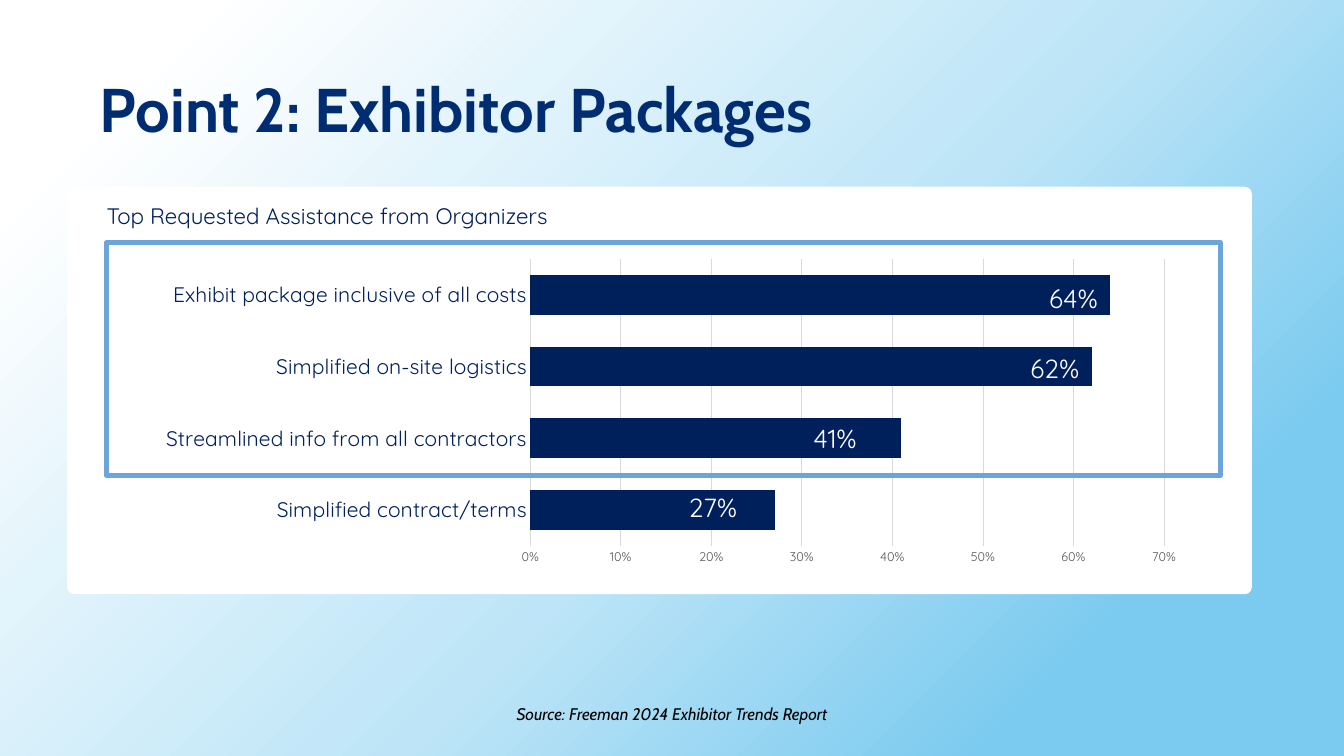
from pptx import Presentation
from pptx.chart.data import CategoryChartData
from pptx.dml.color import RGBColor
from pptx.enum.chart import XL_CHART_TYPE, XL_TICK_MARK
from pptx.enum.shapes import MSO_SHAPE
from pptx.enum.text import MSO_ANCHOR, MSO_AUTO_SIZE, PP_ALIGN
from pptx.oxml import parse_xml
from pptx.oxml.ns import nsdecls
from pptx.util import Inches, Pt

# Content
TITLE = "Point 2: Exhibitor Packages"
CHART_HEADING = "Top Requested Assistance from Organizers"
SOURCE = "Source: Freeman 2024 Exhibitor Trends Report"
REQUESTS = [  # category, share, left and top of its value label; bottom bar first
    ("Simplified contract/terms", 0.27, 9.11, 6.5),
    ("Streamlined info from all contractors", 0.41, 10.76, 5.59),
    ("Simplified on-site logistics", 0.62, 13.63, 4.66),
    ("Exhibit package inclusive of all costs", 0.64, 13.88, 3.74),
]
COLORS = {"title": "002D72", "navy": "00205C", "white": "FFFFFF", "black": "000000",
          "grid": "D9D9D9", "tick": "595959", "highlight": "6DA5DB"}
GRADIENT = [(17, "7BCAEF"), (45, "BDE5F7"), (90, "FFFFFF")]
CHART_BOX = (1.93, 3.34, 13.93, 4.21)
PLOT_BOX = (7.02, 3.43, 8.39, 3.79)


def color(name):
    return RGBColor.from_string(COLORS[name])


def set_font(font, name, size, color_name):
    font.name, font.size = name, Pt(size)
    font.color.rgb = color(color_name)


def add_text(slide, text, box, name, size, color_name, inset=0):
    shape = slide.shapes.add_textbox(*map(Inches, box))
    frame = shape.text_frame
    frame.word_wrap = True
    frame.auto_size = MSO_AUTO_SIZE.SHAPE_TO_FIT_TEXT
    if inset == 0:
        frame.margin_left = frame.margin_right = frame.margin_top = frame.margin_bottom = 0
    paragraph = frame.paragraphs[0]
    paragraph.text = text
    set_font(paragraph.font, name, size, color_name)
    return shape


def set_background(slide):
    stops = "".join(f'<a:gs pos="{position * 1000}"><a:srgbClr val="{value}"/></a:gs>'
                    for position, value in GRADIENT)
    slide._element.cSld.insert(0, parse_xml(
        f'<p:bg {nsdecls("p", "a")}><p:bgPr><a:gradFill><a:gsLst>{stops}</a:gsLst>'
        '<a:path path="circle"><a:fillToRect l="100000" t="100000"/></a:path>'
        '</a:gradFill><a:effectLst/></p:bgPr></p:bg>'))


def set_plot_layout(chart):
    left, top, width, height = CHART_BOX
    plot_left, plot_top, plot_width, plot_height = PLOT_BOX
    parts = {"x": (plot_left - left) / width, "y": (plot_top - top) / height,
             "w": plot_width / width, "h": plot_height / height}
    modes = '<c:xMode val="edge"/><c:yMode val="edge"/>'
    values = "".join(f'<c:{key} val="{value:.3f}"/>' for key, value in parts.items())
    plot_area = chart._chartSpace.chart.plotArea
    for layout in plot_area.findall("{*}layout"):
        plot_area.remove(layout)
    plot_area.insert(0, parse_xml(
        f'<c:layout {nsdecls("c")}><c:manualLayout><c:layoutTarget val="inner"/>'
        f'{modes}{values}</c:manualLayout></c:layout>'))


def add_request_chart(slide):
    data = CategoryChartData(number_format="0%")
    data.categories = [request[0] for request in REQUESTS]
    data.add_series("Series 1", [request[1] for request in REQUESTS])
    chart = slide.shapes.add_chart(
        XL_CHART_TYPE.BAR_CLUSTERED, *map(Inches, CHART_BOX), data).chart
    chart.has_legend = chart.has_title = False
    set_font(chart.font, "Calibri", 10, "black")

    plot = chart.plots[0]
    plot.gap_width, plot.vary_by_categories = 80, False
    fill = plot.series[0].format.fill
    fill.solid()
    fill.fore_color.rgb = color("navy")

    categories, values = chart.category_axis, chart.value_axis
    for axis in (categories, values):
        axis.major_tick_mark = axis.minor_tick_mark = XL_TICK_MARK.NONE
    set_font(categories.tick_labels.font, "Quicksand", 20, "navy")
    set_font(values.tick_labels.font, "Quicksand", 12, "tick")
    values.tick_labels.number_format = "0%"
    values.tick_labels.number_format_is_linked = False
    values.minimum_scale, values.maximum_scale, values.major_unit = 0, 0.7, 0.1
    values.format.line.fill.background()
    for line in (categories.format.line, values.major_gridlines.format.line):
        line.color.rgb = color("grid")
        line.width = Pt(0.75)
    set_plot_layout(chart)


def main():
    presentation = Presentation()
    presentation.slide_width, presentation.slide_height = Inches(17.78), Inches(10)
    slide = presentation.slides.add_slide(presentation.slide_layouts[5])
    set_background(slide)

    # Title
    title = slide.shapes.title
    title.left, title.top, title.width, title.height = map(Inches, (1.22, 0.53, 15.33, 1.93))
    title.text_frame.vertical_anchor = MSO_ANCHOR.MIDDLE
    paragraph = title.text_frame.paragraphs[0]
    paragraph.text = TITLE
    paragraph.alignment, paragraph.line_spacing = PP_ALIGN.LEFT, 0.9
    set_font(paragraph.font, "Cabin", 58.7, "title")
    paragraph.font.bold = True

    # White card with heading and chart
    card = slide.shapes.add_shape(MSO_SHAPE.ROUNDED_RECTANGLE,
                                  *map(Inches, (0.89, 2.47, 15.67, 5.39)))
    card.adjustments[0] = 0.017
    card.shadow.inherit = False
    card.fill.solid()
    card.fill.fore_color.rgb = color("white")
    card.line.fill.background()
    add_text(slide, CHART_HEADING, (1.41, 2.67, 10.05, 0.36), "Quicksand", 21.3, "navy")
    add_request_chart(slide)

    # Value labels on the bars
    for _, share, left, top in REQUESTS:
        add_text(slide, f"{share:.0%}", (left, top, 1.03, 0.42), "Quicksand", 24.9, "white")

    # Frame around the top three requests
    frame = slide.shapes.add_shape(MSO_SHAPE.RECTANGLE,
                                   *map(Inches, (1.41, 3.21, 14.74, 3.08)))
    frame.shadow.inherit = False
    frame.fill.background()
    frame.line.color.rgb = color("highlight")
    frame.line.width = Pt(4.5)

    # Source line
    source = add_text(slide, SOURCE, (6.57, 9.26, 4.64, 0.37), "Cabin", 16, "black", inset=0.1)
    source.text_frame.word_wrap = False
    paragraph = source.text_frame.paragraphs[0]
    paragraph.alignment = PP_ALIGN.CENTER
    paragraph.font.italic = True

    presentation.save("out.pptx")


if __name__ == "__main__":
    main()
